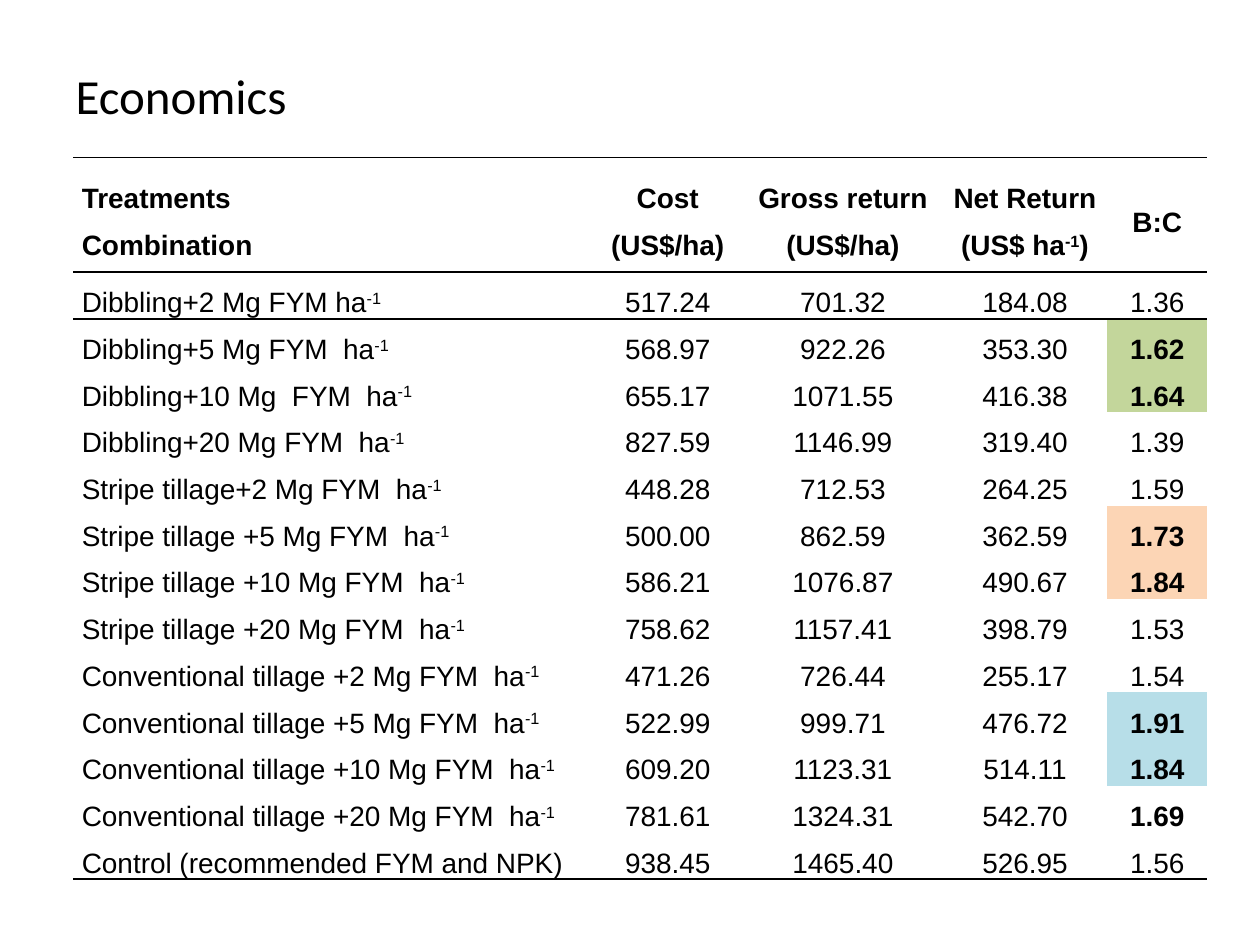
from lxml.etree import SubElement
from pptx import Presentation
from pptx.dml.color import RGBColor
from pptx.enum.text import MSO_ANCHOR, PP_ALIGN
from pptx.oxml.ns import qn
from pptx.util import Inches, Pt

BLACK = RGBColor(0x00, 0x00, 0x00)
GREEN = RGBColor(0xC3, 0xD6, 0x9B)
ORANGE = RGBColor(0xFC, 0xD5, 0xB5)
BLUE = RGBColor(0xB7, 0xDE, 0xE8)

PLAIN_TABLE_STYLE = "{2D5ABB26-0587-4C30-8999-92F81FD0307C}"
COLUMN_WEIGHTS = (4.12, 1.2, 1.58, 1.31, 0.79)
HEADER_HEIGHT, ROW_HEIGHT, LAST_ROW_HEIGHT = 0.91, 0.3, 0.36

# Text between carets is superscript
HEADER = ("Treatments\nCombination", "Cost\n(US$/ha)", "Gross return\n(US$/ha)",
          "Net Return\n(US$ ha^-1^)", "B:C")
TREATMENTS = (
    ("Dibbling+2 Mg FYM ha^-1^", "517.24", "701.32", "184.08", "1.36"),
    ("Dibbling+5 Mg FYM  ha^-1^", "568.97", "922.26", "353.30", "1.62"),
    ("Dibbling+10 Mg  FYM  ha^-1^", "655.17", "1071.55", "416.38", "1.64"),
    ("Dibbling+20 Mg FYM  ha^-1^", "827.59", "1146.99", "319.40", "1.39"),
    ("Stripe tillage+2 Mg FYM  ha^-1^", "448.28", "712.53", "264.25", "1.59"),
    ("Stripe tillage +5 Mg FYM  ha^-1^", "500.00", "862.59", "362.59", "1.73"),
    ("Stripe tillage +10 Mg FYM  ha^-1^", "586.21", "1076.87", "490.67", "1.84"),
    ("Stripe tillage +20 Mg FYM  ha^-1^", "758.62", "1157.41", "398.79", "1.53"),
    ("Conventional tillage +2 Mg FYM  ha^-1^", "471.26", "726.44", "255.17", "1.54"),
    ("Conventional tillage +5 Mg FYM  ha^-1^", "522.99", "999.71", "476.72", "1.91"),
    ("Conventional tillage +10 Mg FYM  ha^-1^", "609.20", "1123.31", "514.11", "1.84"),
    ("Conventional tillage +20 Mg FYM  ha^-1^", "781.61", "1324.31", "542.70", "1.69"),
    ("Control (recommended FYM and NPK)", "938.45", "1465.40", "526.95", "1.56"),
)
# Benefit-cost highlights by table row
RATIO_FILLS = {2: GREEN, 3: GREEN, 6: ORANGE, 7: ORANGE, 10: BLUE, 11: BLUE}
BOLD_RATIO_ROWS = {*RATIO_FILLS, 12}


def add_title(slide, left, top, width, height):
    title = slide.shapes.title
    title.left, title.top, title.width, title.height = left, top, width, height
    title.text_frame.text = "Economics"
    title.text_frame.vertical_anchor = MSO_ANCHOR.MIDDLE
    paragraph = title.text_frame.paragraphs[0]
    paragraph.alignment = PP_ALIGN.LEFT
    paragraph.font.name, paragraph.font.size = "Calibri", Pt(28)
    paragraph.font.color.rgb = BLACK


def write_cell(cell, text, bold, alignment):
    frame = cell.text_frame
    for index, line in enumerate(text.split("\n")):
        paragraph = frame.add_paragraph() if index else frame.paragraphs[0]
        paragraph.alignment = alignment
        paragraph.line_spacing = 1.5
        for part, words in enumerate(line.split("^")):
            if not words:
                continue
            run = paragraph.add_run()
            run.text = words
            font = run.font
            font.name, font.size, font.bold = "Arial", Pt(16), bold
            font.color.rgb = BLACK
            if part % 2:
                run._r.get_or_add_rPr().set("baseline", "30000")


def add_border(cell, edge):
    properties = cell._tc.get_or_add_tcPr()
    line = SubElement(properties, qn(f"a:{edge}"), w=str(Pt(1)))
    fill = SubElement(line, qn("a:solidFill"))
    SubElement(fill, qn("a:srgbClr"), val=str(BLACK))


def add_economics_table(slide, left, top, width, height):
    rows = (HEADER, *TREATMENTS)
    last = len(rows) - 1
    shape = slide.shapes.add_table(len(rows), len(HEADER), left, top, width, height)
    table = shape.table
    table.first_row = table.horz_banding = False
    shape._element.find(f".//{qn('a:tableStyleId')}").text = PLAIN_TABLE_STYLE

    # Column and row sizes
    for column, weight in zip(table.columns, COLUMN_WEIGHTS):
        column.width = round(width * weight / sum(COLUMN_WEIGHTS))
    special_heights = {0: HEADER_HEIGHT, last: LAST_ROW_HEIGHT}
    for index, row in enumerate(table.rows):
        row.height = Inches(special_heights.get(index, ROW_HEIGHT))
    shape.height = height

    # Text, rules and highlights
    for row_index, values in enumerate(rows):
        is_header = row_index == 0
        for column_index, text in enumerate(values):
            cell = table.cell(row_index, column_index)
            is_ratio = column_index == len(HEADER) - 1
            cell.margin_left = cell.margin_right = Inches(0.07)
            cell.margin_top = cell.margin_bottom = 0
            cell.vertical_anchor = MSO_ANCHOR.MIDDLE if is_header else MSO_ANCHOR.BOTTOM
            bold = is_header or (is_ratio and row_index in BOLD_RATIO_ROWS)
            write_cell(cell, text, bold,
                       PP_ALIGN.CENTER if column_index else PP_ALIGN.LEFT)
            if row_index in (0, 1):
                add_border(cell, "lnT")
            if row_index in (0, last):
                add_border(cell, "lnB")
            if is_ratio and row_index in RATIO_FILLS:
                cell.fill.solid()
                cell.fill.fore_color.rgb = RATIO_FILLS[row_index]
            else:
                cell.fill.background()


def main():
    presentation = Presentation()
    presentation.slide_width, presentation.slide_height = Inches(10), Inches(7.5)
    slide = presentation.slides.add_slide(presentation.slide_layouts[5])
    add_economics_table(slide, Inches(0.58), Inches(1.25), Inches(9), Inches(6.11))
    add_title(slide, Inches(0.5), Inches(0.42), Inches(9), Inches(0.67))
    presentation.save("out.pptx")


if __name__ == "__main__":
    main()
